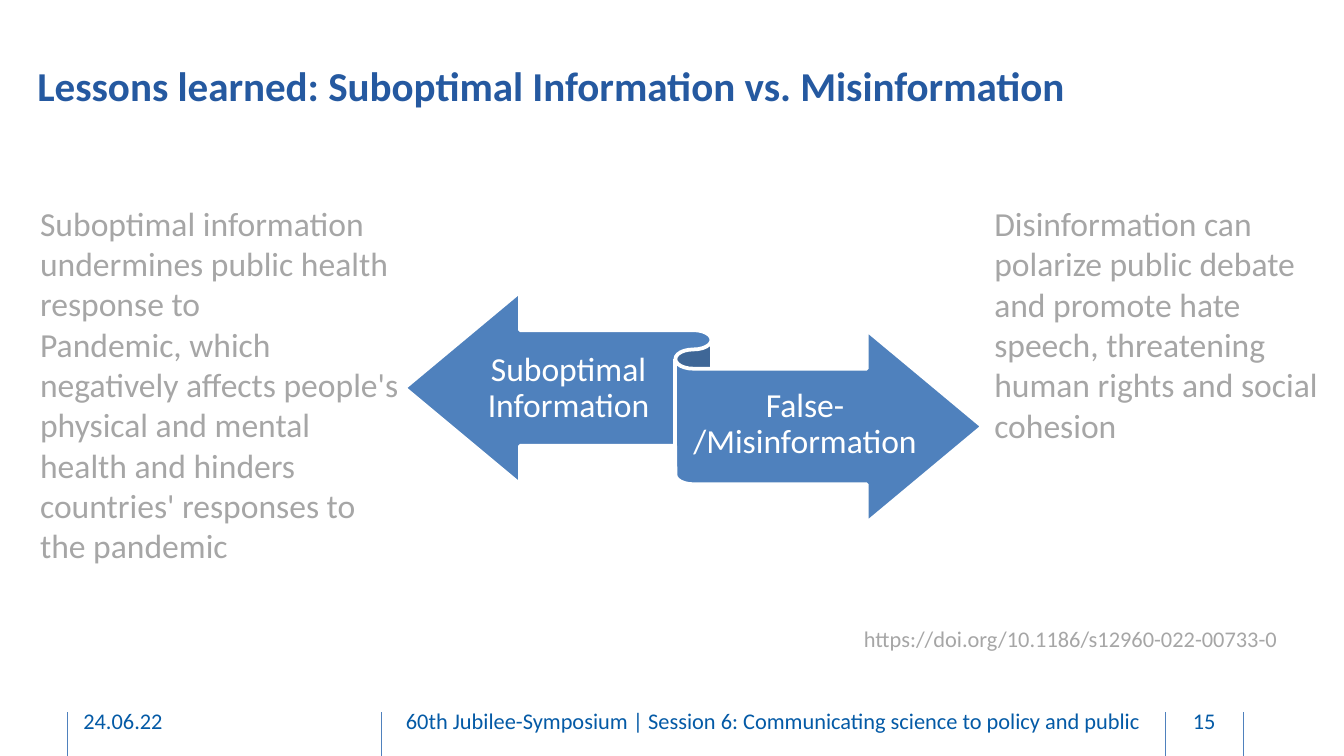
from lxml.etree import SubElement
from pptx import Presentation
from pptx.dml.color import RGBColor
from pptx.enum.shapes import MSO_CONNECTOR, MSO_SHAPE
from pptx.enum.text import MSO_ANCHOR, PP_ALIGN
from pptx.oxml.ns import qn
from pptx.util import Inches, Pt

THEME = {
    "font": "Calibri",
    "accent": "4F81BD",
    "outline": "FFFFFF",
    "rule_width": 0.5,
    "outline_width": 2,
    "title": {"size": 22, "color": "2559A0", "bold": True},
    "body": {"size": 18, "color": "A6A6A6"},
    "source": {"size": 12, "color": "A6A6A6", "wrap": False},
    "footer": {"size": 12, "color": "045AA6", "middle": True, "margins": (0, 0.05)},
    "number": {"size": 12, "color": "045AA6", "middle": True, "margins": (0, 0.05), "center": True},
    "arrow": {"size": 18, "color": "FFFFFF", "middle": True, "margins": (0, 0.07),
              "center": True, "spacing": 0.9},
}
SLIDE_SIZE = (10, 10 * 9 / 16)
FOOTER_TOP, FOOTER_HEIGHT = 5.21, 0.3
RULE_TOP, RULE_HEIGHT = 5.3, 0.34
RULES = [0.5, 2.84, 8.67, 9.25]
RIBBON = (3.01, 2.17, 4.3, 1.72)
TEXTS = [
    ("title", (0.18, 0.4, 8.73, 0.78),
     ["Lessons learned: Suboptimal Information vs. Misinformation"]),
    ("arrow", (3.52, 2.47, 1.42, 0.84), ["Suboptimal Information"]),
    ("arrow", (5.15, 2.74, 1.68, 0.84), ["False- /Misinformation"]),
    ("body", (0.2, 1.46, 2.91, 2.83), [
        "Suboptimal information undermines public health response to",
        "Pandemic, which negatively affects people's physical and mental health "
        "and hinders countries' responses to the pandemic",
    ]),
    ("body", (7.3, 1.46, 2.7, 1.92), [
        "Disinformation can",
        "polarize public debate and promote hate speech, threatening human rights "
        "and social cohesion",
    ]),
    ("source", (6.33, 4.6, 3.38, 0.3), ["https://doi.org/10.1186/s12960-022-00733-0"]),
]
FOOTERS = [
    ("footer", 0.62, 2.03, "24.06.22"),
    ("footer", 3.02, 5.48,
     "60th Jubilee-Symposium | Session 6: Communicating science to policy and public"),
    ("number", 8.69, 0.54, "15"),
]


def color(name):
    return RGBColor.from_string(name)


def add_text(page, role, place, lines):
    style = THEME[role]
    frame = page.shapes.add_textbox(*map(Inches, place)).text_frame
    frame.word_wrap = style.get("wrap", True)
    frame.vertical_anchor = MSO_ANCHOR.MIDDLE if style.get("middle") else MSO_ANCHOR.TOP
    side, edge = map(Inches, style.get("margins", (0.1, 0.05)))
    frame.margin_left = frame.margin_right = side
    frame.margin_top = frame.margin_bottom = edge
    frame.text = "\n".join(lines)
    for paragraph in frame.paragraphs:
        paragraph.alignment = PP_ALIGN.CENTER if style.get("center") else PP_ALIGN.LEFT
        paragraph.line_spacing = style.get("spacing")
        paragraph.font.name = THEME["font"]
        paragraph.font.size = Pt(style["size"])
        paragraph.font.bold = style.get("bold", False)
        paragraph.font.color.rgb = color(style["color"])


def add_rule(page, left):
    ends = map(Inches, (left, RULE_TOP, left, RULE_TOP + RULE_HEIGHT))
    rule = page.shapes.add_connector(MSO_CONNECTOR.STRAIGHT, *ends)
    rule.line.color.rgb = color(THEME["accent"])
    rule.line.width = Pt(THEME["rule_width"])
    SubElement(rule._element.spPr, qn("a:effectLst"))


def add_ribbon(page):
    ribbon = page.shapes.add_shape(MSO_SHAPE.LEFT_RIGHT_RIBBON, *map(Inches, RIBBON))
    ribbon.shadow.inherit = False
    ribbon.fill.solid()
    ribbon.fill.fore_color.rgb = color(THEME["accent"])
    ribbon.line.color.rgb = color(THEME["outline"])
    ribbon.line.width = Pt(THEME["outline_width"])


def main():
    """Build the slide on suboptimal information and misinformation."""
    deck = Presentation()
    deck.slide_width, deck.slide_height = map(Inches, SLIDE_SIZE)
    page = deck.slides.add_slide(deck.slide_layouts[6])
    for left in RULES:
        add_rule(page, left)
    add_ribbon(page)
    for role, place, lines in TEXTS:
        add_text(page, role, place, lines)
    for role, left, width, words in FOOTERS:
        add_text(page, role, (left, FOOTER_TOP, width, FOOTER_HEIGHT), [words])
    deck.save("out.pptx")


if __name__ == "__main__":
    main()
